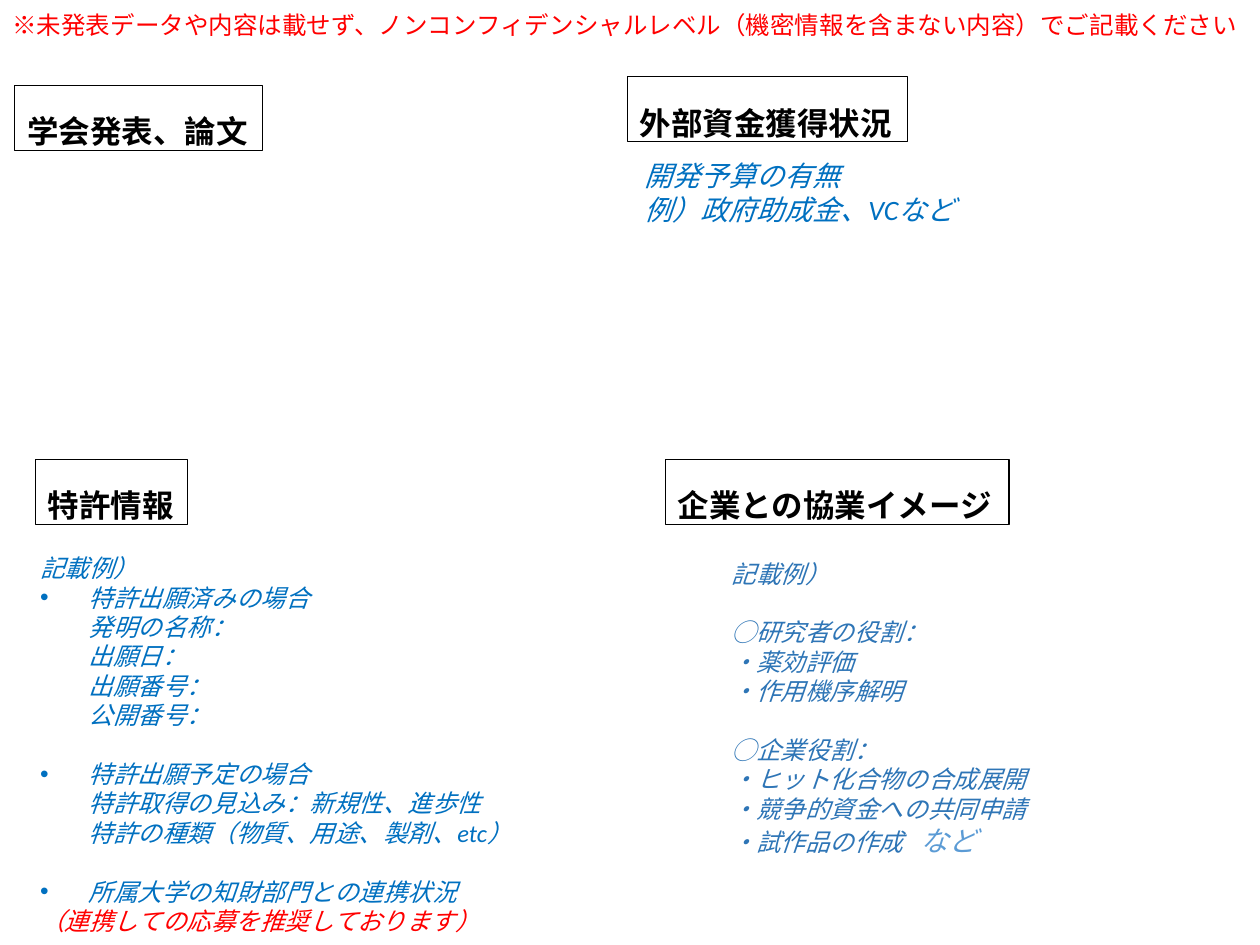
from lxml.etree import SubElement
from pptx import Presentation
from pptx.dml.color import RGBColor
from pptx.enum.shapes import MSO_SHAPE as Kind
from pptx.enum.text import MSO_ANCHOR as Anchor, MSO_AUTO_SIZE as Fit, PP_ALIGN as Align
from pptx.oxml.ns import qn
from pptx.util import Cm, Pt

RED, BLACK, BLUE, STEEL, SKY = "FF0000", "000000", "0070C0", "2E75B6", "5B9BD5"
LEAD = 1.2

NOTICE = "※未発表データや内容は載せず、ノンコンフィデンシャルレベル（機密情報を含まない内容）でご記載ください"
FUNDS = [("", "開発予算の有無"), ("", "例）政府助成金、VCなど")]
PATENT = [
    ("", "記載例）"),
    ("dot", "特許出願済みの場合"),
    ("sub", "発明の名称："),
    ("sub", "出願日："),
    ("sub", "出願番号："),
    ("sub", "公開番号："),
    ("dot gap", "特許出願予定の場合"),
    ("sub", "特許取得の見込み：新規性、進歩性"),
    ("sub", "特許の種類（物質、用途、製剤、etc）"),
    ("dot gap", "所属大学の知財部門との連携状況"),
    ("red", "（連携しての応募を推奨しております）"),
]
JOINT = [
    ("", "記載例）"),
    ("gap", "◯研究者の役割："),
    ("", "・薬効評価"),
    ("", "・作用機序解明"),
    ("gap", "◯企業役割："),
    ("", "・ヒット化合物の合成展開"),
    ("", "・競争的資金への共同申請"),
    ("tab", "・試作品の作成"),
]


def tint(code):
    """Turn a hex string into a colour."""
    return RGBColor.from_string(code)


def style(run, size, code, face="Calibri", bold=False, slant=False):
    """Format one run, with the Japanese face beside the Latin one."""
    font = run.font
    font.size, font.bold, font.italic = Pt(size), bold, slant
    font.color.rgb = tint(code)
    font.name = face
    SubElement(run._r.get_or_add_rPr(), qn("a:ea"), typeface="Noto Sans CJK JP")


def place(shape, box):
    """Move a shape to a box given in centimetres."""
    shape.left, shape.top, shape.width, shape.height = map(Cm, box)


def setup(frame, wrap, anchor=Anchor.TOP):
    """Set the insets, wrapping and anchor of a text frame."""
    frame.word_wrap, frame.auto_size = wrap, Fit.NONE
    frame.vertical_anchor = anchor
    frame.margin_left = frame.margin_right = Cm(0.25)
    frame.margin_top = frame.margin_bottom = Cm(0.13)


def indent(para, tags):
    """Give a paragraph its bullet, indent and tab stop."""
    props = para._p.get_or_add_pPr()
    hang = Cm(0.98)
    dot = "dot" in tags
    props.set("marL", str(hang if dot or "sub" in tags else 0))
    props.set("indent", str(-hang if dot else 0))
    if dot:
        SubElement(props, qn("a:buFont"), typeface="Arial")
        SubElement(props, qn("a:buChar"), char="•")
    else:
        SubElement(props, qn("a:buNone"))
    if "tab" in tags:
        tabs = SubElement(props, qn("a:tabLst"))
        SubElement(tabs, qn("a:tab"), pos=str(Cm(7.45)), algn="l")


def items(shape, box, rows, size, code):
    """Fill a shape with an italic list."""
    place(shape, box)
    frame = shape.text_frame
    setup(frame, True)
    frame.text = "\n".join(text for _, text in rows)
    for para, (tags, _) in zip(frame.paragraphs, rows):
        para.alignment = Align.LEFT
        para.line_spacing = Pt(size * LEAD)
        para.space_before = Pt(size * LEAD if "gap" in tags else 0)
        indent(para, tags)
        style(para.runs[0], size, RED if "red" in tags else code, slant=True)
        if "tab" in tags:
            para.line_spacing = Pt(16 * LEAD)
            tail = para.add_run()
            tail.text = "\tなど"
            style(tail, 16, SKY, slant=True)


def label(slide, box, text, face="Arial"):
    """Draw a framed section heading."""
    shape = slide.shapes.add_shape(Kind.RECTANGLE, 0, 0, 0, 0)
    place(shape, box)
    shape.shadow.inherit = False
    shape.fill.background()
    shape.line.color.rgb = tint(BLACK)
    shape.line.width = Pt(0.75)
    frame = shape.text_frame
    setup(frame, False, Anchor.BOTTOM)
    frame.margin_bottom = 0
    frame.text = text
    para = frame.paragraphs[0]
    para.alignment = Align.LEFT
    style(para.runs[0], 18, BLACK, face, bold=True)


def notice(shape, box):
    """Set the red notice in the title."""
    place(shape, box)
    frame = shape.text_frame
    setup(frame, False)
    frame.text = NOTICE
    para = frame.paragraphs[0]
    para.alignment = Align.LEFT
    para.line_spacing = Pt(14 * LEAD)
    style(para.runs[0], 14, RED)


def panel(slide, box, text, wide, body, shift, rows, size, code):
    """Place a heading and its list in a box."""
    x, y, w, h = box
    dx, dy = shift
    label(slide, (x, y, wide, 1.3), text)
    items(body, (x + dx, y + dy, w, h - dy), rows, size, code)


def main():
    """Build the slide and save it."""
    deck = Presentation()
    deck.slide_width, deck.slide_height = Cm(25.4), Cm(19.05)
    slide = deck.slides.add_slide(deck.slide_layouts[3])
    left, right = slide.placeholders[1], slide.placeholders[2]
    notice(slide.shapes.title, (0, 0.08, 25.45, 0.86))
    label(slide, (0.3, 1.73, 5, 1.3), "学会発表、論文", "Calibri")
    funds = slide.shapes.add_textbox(0, 0, 0, 0)
    panel(slide, (12.65, 1.55, 10.95, 6.57), "外部資金獲得状況", 5.64,
          funds, (0.1, 1.52), FUNDS, 16, BLUE)
    panel(slide, (0.71, 9.27, 11.61, 9.78), "特許情報", 3.07,
          left, (-0.15, 1.75), PATENT, 14, BLUE)
    panel(slide, (13.41, 9.27, 11.61, 8.18), "企業との協業イメージ", 6.93,
          right, (1.09, 1.86), JOINT, 14, STEEL)
    deck.save("out.pptx")


if __name__ == "__main__":
    main()
